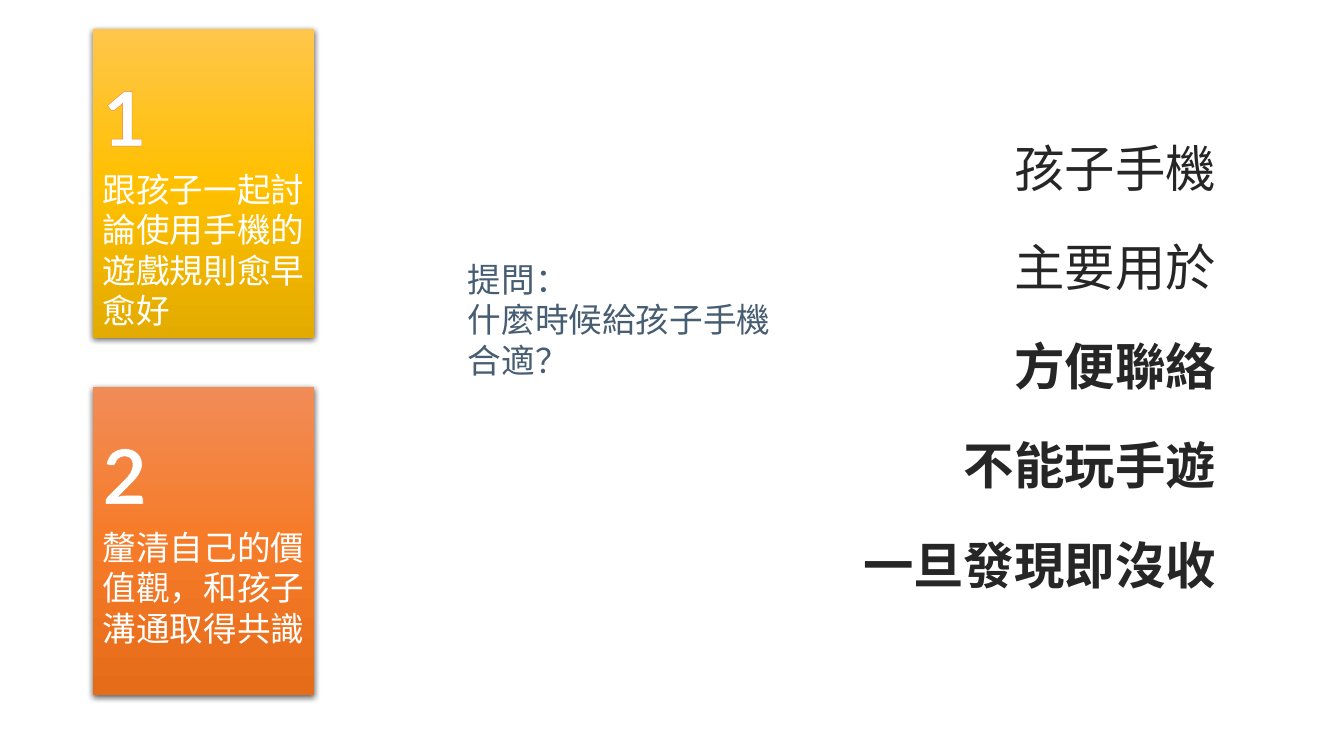
import pptx
import pptx.util
import pptx.dml.color
import pptx.enum.shapes
import pptx.enum.text
import pptx.oxml
import pptx.oxml.ns

WHITE, SLATE, INK, EDGE = "FFFFFF", "475D72", "262626", "F07A31"
CARDS = [
    ("1", "跟孩子一起討論使用手機的遊戲規則愈早愈好",
     ["FFC64B", "FFC000", "E3AB00"]),
    ("2", "釐清自己的價值觀，和孩子溝通取得共識",
     ["F18C57", "F67B28", "E56C19"]),
]
ASK = ["提問：", "什麼時候給孩子手機合適？"]
RULES = ["孩子手機", "主要用於", "方便聯絡", "不能玩手遊", "一旦發現即沒收"]
LEFT = pptx.enum.text.PP_ALIGN.LEFT
RIGHT = pptx.enum.text.PP_ALIGN.RIGHT


def hue(code):
    return pptx.dml.color.RGBColor.from_string(code)


def node(tag, inner="", **attrs):
    """Make one drawing element with the given content."""
    pairs = " ".join(f'{key}="{val}"' for key, val in attrs.items())
    space = pptx.oxml.ns.nsdecls("a")
    return pptx.oxml.parse_xml(f"<a:{tag} {space} {pairs}>{inner}</a:{tag}>")


class Deck:
    """Style and current slide; places are percents of the slide's size."""
    font = "Lato"

    def __init__(self, wide, high):
        self.file = pptx.Presentation()
        self.file.slide_width = pptx.util.Inches(wide)
        self.file.slide_height = pptx.util.Inches(high)
        self.slide = self.file.slides.add_slide(self.file.slide_layouts[1])

    def place(self, left, top, width, height):
        col, row = self.file.slide_width / 100, self.file.slide_height / 100
        return [int(n) for n in
                (left * col, top * row, width * col, height * row)]

    def frame(self, shape, lines):
        text = shape.text_frame
        text.text = "\n".join(lines)
        text.word_wrap = True
        text.auto_size = pptx.enum.text.MSO_AUTO_SIZE.NONE
        text.vertical_anchor = pptx.enum.text.MSO_ANCHOR.TOP
        return text

    def style(self, para, size, color, bold=False, align=LEFT,
              space=1.0, before=0, after=0):
        para.alignment, para.line_spacing = align, space
        para.space_before = pptx.util.Pt(before)
        para.space_after = pptx.util.Pt(after)
        for run in para.runs:
            font = run.font
            font.size, font.bold = pptx.util.Pt(size), bold
            font.color.rgb, font.name = hue(color), self.font
            run._r.get_or_add_rPr().append(node("ea", typeface=self.font))

    def holder(self, index, box, lines):
        shape = self.slide.placeholders[index]
        shape.left, shape.top, shape.width, shape.height = self.place(*box)
        return self.frame(shape, lines).paragraphs

    def title(self, box, lines):
        for para in self.holder(0, box, lines):
            self.style(para, 24, SLATE)

    def body(self, box, lines, strong):
        for i, para in enumerate(self.holder(1, box, lines)):
            self.style(para, 36, INK, i >= strong, RIGHT, 1.5, 6)
            # no bullet, no indent
            props = para._p.get_or_add_pPr()
            props.set("marL", "0")
            props.set("indent", "0")
            props.append(node("buNone"))

    def card(self, box, mark, words, shades):
        shape = self.slide.shapes.add_shape(
            pptx.enum.shapes.MSO_SHAPE.RECTANGLE, *self.place(*box))
        shape.line.fill.background()
        # three-stop gradient, running downward
        shape.fill.gradient()
        shape.fill.gradient_angle = 270
        stops = shape._element.spPr.find(".//" + pptx.oxml.ns.qn("a:gsLst"))
        for stop in list(stops):
            stops.remove(stop)
        for i, shade in enumerate(shades):
            stops.append(node("gs", f'<a:srgbClr val="{shade}"/>',
                              pos=i * 50000))
        # soft shadow below
        shape.shadow.inherit = False
        glow = shape._element.spPr.find(pptx.oxml.ns.qn("a:effectLst"))
        glow.append(node(
            "outerShdw",
            '<a:srgbClr val="000000"><a:alpha val="63000"/></a:srgbClr>',
            blurRad=pptx.util.Pt(4.5), dist=pptx.util.Pt(1.5),
            dir=5400000, algn="ctr", rotWithShape=0))
        # number and advice
        text = self.frame(shape, [mark, words])
        text.margin_top = pptx.util.Inches(0.41)
        head, note = text.paragraphs
        self.style(head, 54, WHITE, True, after=5.5)
        self.style(note, 24, WHITE)
        head.runs[0]._r.rPr.insert(0, node(
            "ln", f'<a:solidFill><a:srgbClr val="{EDGE}"/></a:solidFill>',
            w=pptx.util.Pt(1.5)))


def main():
    deck = Deck(13.33, 7.5)
    # question and answer
    deck.title((34.06, 33.6, 25.88, 17.47), ASK)
    deck.body((55.06, 13.47, 36.16, 67.47), RULES, strong=2)
    # numbered cards
    for i, card in enumerate(CARDS):
        deck.card((6.9, 3.87 + i * 47.33, 16.5, 40.8), *card)
    deck.file.save("out.pptx")


if __name__ == "__main__":
    main()
